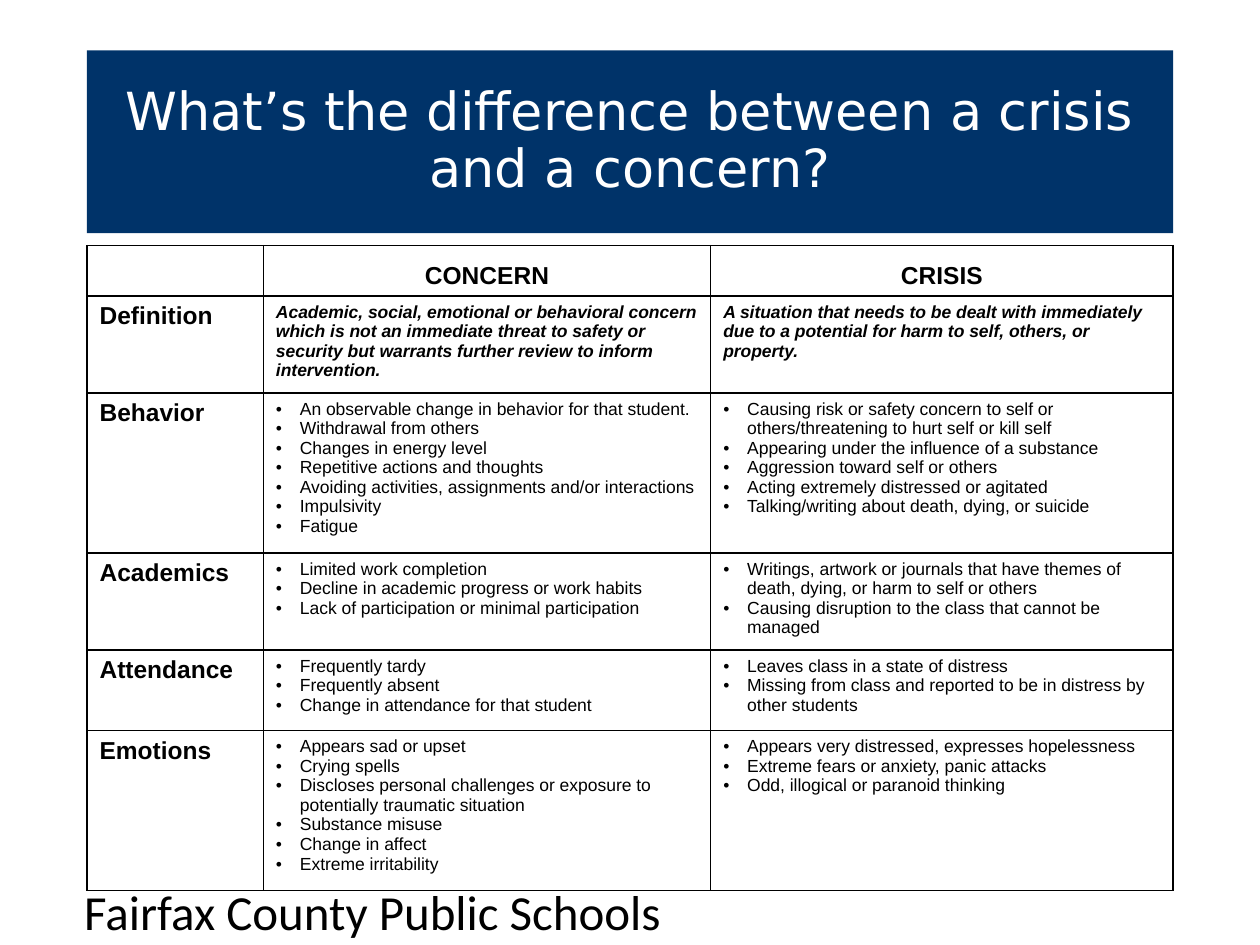
from dataclasses import dataclass

from lxml import etree
from pptx import Presentation
from pptx.dml.color import RGBColor
from pptx.enum.text import MSO_ANCHOR, MSO_AUTO_SIZE, PP_ALIGN
from pptx.oxml.ns import qn
from pptx.util import Inches, Pt

CENTER, LEFT = PP_ALIGN.CENTER, PP_ALIGN.LEFT
TOP, MIDDLE, BOTTOM = MSO_ANCHOR.TOP, MSO_ANCHOR.MIDDLE, MSO_ANCHOR.BOTTOM
NO_AUTOFIT = MSO_AUTO_SIZE.NONE
COLORS = {"navy": "003369", "white": "FFFFFF", "black": "000000"}
MARGIN_LEFT, CONTENT_WIDTH = 0.69, 8.62
COLUMN_WIDTHS = (1.4, 3.55, 3.67)
HEADER_HEIGHT = 0.37
BULLET_INDENT = 0.19


@dataclass
class Topic:
    label: str
    height: float
    concern: list[str]
    crisis: list[str]
    bulleted: bool = True


TOPICS = [
    Topic("Definition", 0.77,
          ["Academic, social, emotional or behavioral concern which is not an immediate "
           "threat to safety or security but warrants further review to inform intervention."],
          ["A situation that needs to be dealt with immediately due to a potential for "
           "harm to self, others, or property."], bulleted=False),
    Topic("Behavior", 1.27,
          ["An observable change in behavior for that student.",
           "Withdrawal from others",
           "Changes in energy level",
           "Repetitive actions and thoughts",
           "Avoiding activities, assignments and/or interactions",
           "Impulsivity",
           "Fatigue"],
          ["Causing risk or safety concern to self or others/threatening to hurt self or kill self",
           "Appearing under the influence of a substance",
           "Aggression toward self or others",
           "Acting extremely distressed or agitated",
           "Talking/writing about death, dying, or suicide"]),
    Topic("Academics", 0.77,
          ["Limited work completion",
           "Decline in academic progress or work habits",
           "Lack of participation or minimal participation"],
          ["Writings, artwork or journals that have themes of death, dying, "
           "or harm to self or others",
           "Causing disruption to the class that cannot be managed"]),
    Topic("Attendance", 0.64,
          ["Frequently tardy",
           "Frequently absent",
           "Change in attendance for that student"],
          ["Leaves class in a state of distress",
           "Missing from class and reported to be in distress by other students"]),
    Topic("Emotions", 1.27,
          ["Appears sad or upset",
           "Crying spells",
           "Discloses personal challenges or exposure to potentially traumatic situation",
           "Substance misuse",
           "Change in affect",
           "Extreme irritability"],
          ["Appears very distressed, expresses hopelessness",
           "Extreme fears or anxiety, panic attacks",
           "Odd, illogical or paranoid thinking"]),
]


def rgb(name: str) -> RGBColor:
    return RGBColor.from_string(COLORS[name])


def add_bullet(paragraph) -> None:
    properties = paragraph._p.get_or_add_pPr()
    properties.set("marL", str(Inches(BULLET_INDENT)))
    properties.set("indent", str(-Inches(BULLET_INDENT)))
    color = etree.SubElement(properties, qn("a:buClr"))
    etree.SubElement(color, qn("a:srgbClr"), val=COLORS["black"])
    etree.SubElement(properties, qn("a:buFont"), typeface="Arial")
    etree.SubElement(properties, qn("a:buChar"), char="•")


def write(frame, lines: list[str], *, size: float, font: str = "Arial", color: str = "black",
          bold: bool = False, italic: bool = False, align=LEFT, bulleted: bool = False,
          spacing: float | None = None) -> None:
    for index, line in enumerate(lines):
        paragraph = frame.add_paragraph() if index else frame.paragraphs[0]
        paragraph.alignment = align
        if spacing:
            paragraph.line_spacing = spacing
        if bulleted:
            add_bullet(paragraph)
        run = paragraph.add_run()
        run.text = line
        run.font.name, run.font.size = font, Pt(size)
        run.font.bold, run.font.italic = bold, italic
        run.font.color.rgb = rgb(color)


def style_cell(cell) -> None:
    cell.fill.background()
    properties = cell._tc.get_or_add_tcPr()
    for position, side in enumerate(("a:lnL", "a:lnR", "a:lnT", "a:lnB")):
        border = etree.Element(qn(side), w=str(Pt(1)))
        fill = etree.SubElement(border, qn("a:solidFill"))
        etree.SubElement(fill, qn("a:srgbClr"), val=COLORS["black"])
        properties.insert(position, border)


def add_banner(slide) -> None:
    banner = slide.shapes.title
    banner.left, banner.top = Inches(MARGIN_LEFT), Inches(0.4)
    banner.width, banner.height = Inches(CONTENT_WIDTH), Inches(1.45)
    banner.fill.solid()
    banner.fill.fore_color.rgb = rgb("navy")
    frame = banner.text_frame
    frame.auto_size, frame.word_wrap = NO_AUTOFIT, True
    frame.vertical_anchor = MIDDLE
    write(frame, ["What’s the difference between a crisis and a concern?"], size=30,
          font="DejaVu Sans", color="white", align=CENTER, spacing=0.9)


def add_comparison(slide) -> None:
    heights = [HEADER_HEIGHT] + [topic.height for topic in TOPICS]
    comparison = slide.shapes.add_table(
        len(heights), len(COLUMN_WIDTHS), Inches(MARGIN_LEFT), Inches(1.95),
        Inches(CONTENT_WIDTH), Inches(sum(heights))).table
    comparison.first_row = comparison.horz_banding = False
    for column, width in zip(comparison.columns, COLUMN_WIDTHS):
        column.width = Inches(width)
    for row, height in zip(comparison.rows, heights):
        row.height = Inches(height)
    for cell in comparison.iter_cells():
        style_cell(cell)
        cell.vertical_anchor = TOP

    for column, heading in enumerate(("CONCERN", "CRISIS"), start=1):
        cell = comparison.cell(0, column)
        cell.vertical_anchor = BOTTOM
        write(cell.text_frame, [heading], size=14, bold=True, align=CENTER)
    for row, topic in enumerate(TOPICS, start=1):
        write(comparison.cell(row, 0).text_frame, [topic.label], size=14, bold=True)
        for column, lines in enumerate((topic.concern, topic.crisis), start=1):
            write(comparison.cell(row, column).text_frame, lines, size=10,
                  bold=not topic.bulleted, italic=not topic.bulleted, bulleted=topic.bulleted)


def add_footer(slide) -> None:
    frame = slide.shapes.add_textbox(Inches(0.57), Inches(6.9), Inches(6.22),
                                     Inches(0.67)).text_frame
    frame.word_wrap = True
    frame.margin_left = frame.margin_right = Inches(0.1)
    frame.margin_top = frame.margin_bottom = Inches(0.1)
    write(frame, ["Fairfax County Public Schools"], size=28, font="Calibri")


def main() -> None:
    presentation = Presentation()
    presentation.slide_width, presentation.slide_height = Inches(10), Inches(7.5)
    slide = presentation.slides.add_slide(presentation.slide_layouts[5])
    add_banner(slide)
    add_footer(slide)
    add_comparison(slide)
    presentation.save("out.pptx")


if __name__ == "__main__":
    main()
